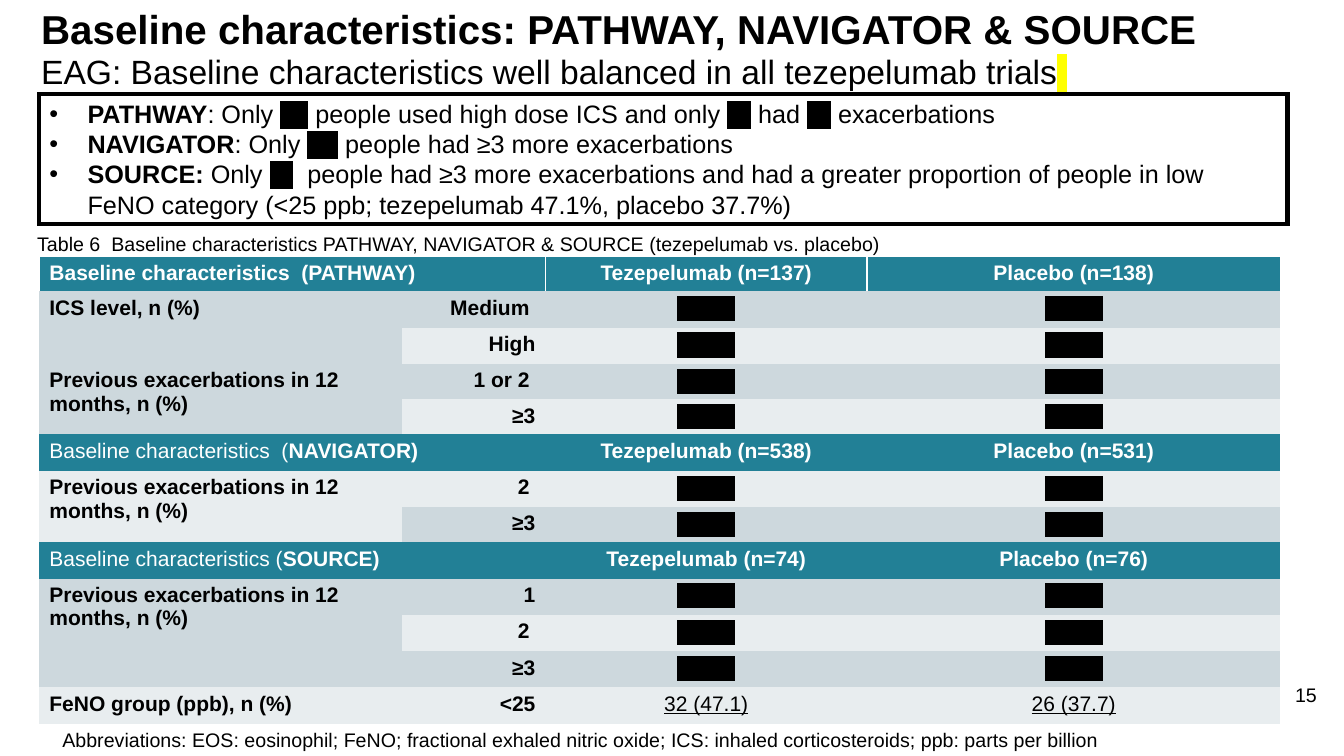
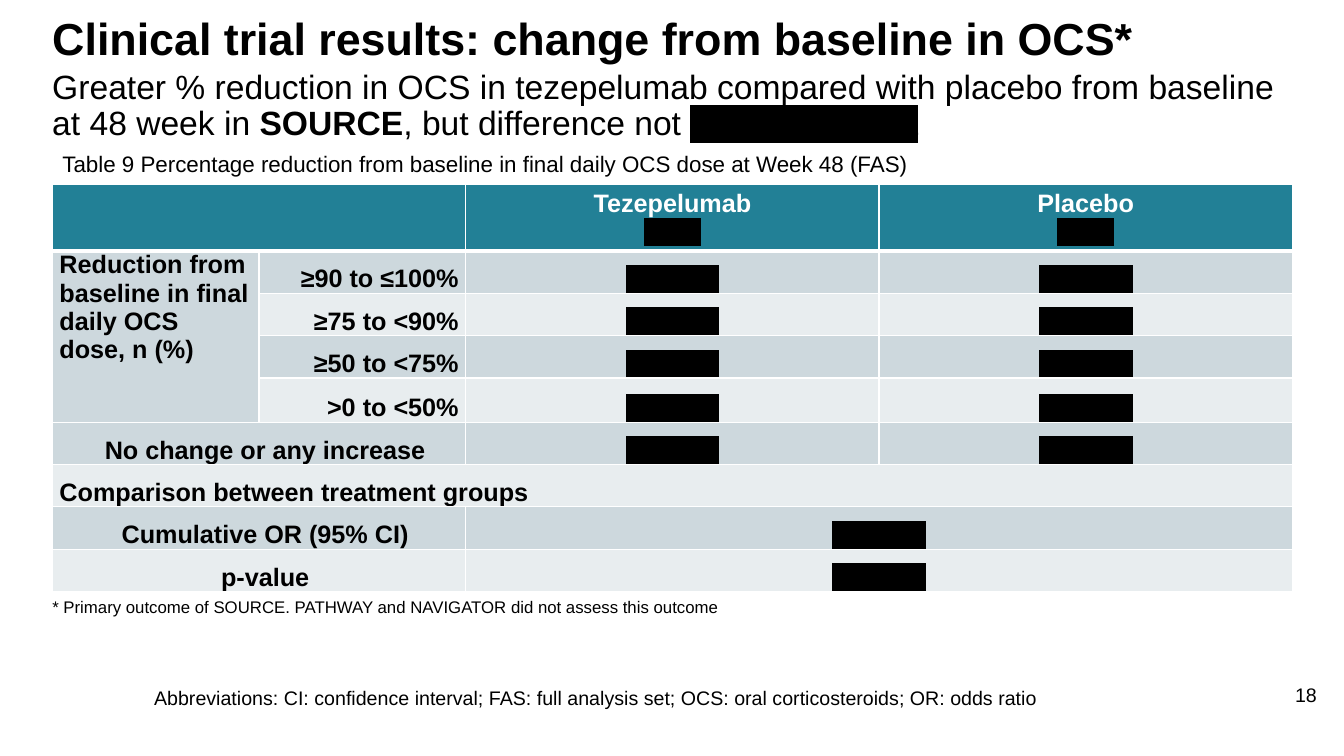
from dataclasses import dataclass, field

from lxml import etree
from pptx import Presentation
from pptx import util as u
from pptx.dml.color import RGBColor
from pptx.enum import shapes, text
from pptx.oxml import ns

BLACK = RGBColor(0x00, 0x00, 0x00)
WHITE = RGBColor(0xFF, 0xFF, 0xFF)
YELLOW = RGBColor(0xFF, 0xFF, 0x00)
TEAL = RGBColor(0x22, 0x80, 0x96)
LIGHT_BAND = RGBColor(0xE8, 0xED, 0xEF)
DARK_BAND = RGBColor(0xCD, 0xD8, 0xDD)
BANDS = (LIGHT_BAND, DARK_BAND)

FONT = "Arial"
NO_GRID_STYLE = "{2D5ABB26-0587-4C30-8999-92F81FD0307C}"
LEFT, CENTER, RIGHT = text.PP_ALIGN.LEFT, text.PP_ALIGN.CENTER, text.PP_ALIGN.RIGHT
TOP, BOTTOM = text.MSO_ANCHOR.TOP, text.MSO_ANCHOR.BOTTOM

BOLD = {"bold": True}
REDACTED = {"highlight": BLACK, "color": BLACK, "bold": False}
REDACTED_UNDERLINED = {**REDACTED, "underline": True}


@dataclass
class Cell:
    """Content and layout of one table cell."""
    paragraphs: list = field(default_factory=list)
    align: int = LEFT
    span: tuple = (1, 1)
    format: dict = field(default_factory=dict)
    anchor: int = TOP
    indent: float = 0
    margins: tuple = (0.1, 0.05, 0.1, 0.01)


def add_element(parent, tag, **attributes):
    """Append a drawing element to a parent."""
    return etree.SubElement(parent, ns.qn(tag), attributes)


def add_run(paragraph, words, style):
    """Add a run with the given format values."""
    run = paragraph.add_run()
    run.text = words
    values = {"name": FONT, "size": 18, "color": BLACK, **style}
    color, highlight = values.pop("color"), values.pop("highlight", None)
    values["size"] = u.Pt(values["size"])
    for name, value in values.items():
        setattr(run.font, name, value)
    run.font.color.rgb = color
    if highlight is not None:
        mark = etree.Element(ns.qn("a:highlight"))
        add_element(mark, "a:srgbClr", val=str(highlight))
        run.font.fill._xPr.find(ns.qn("a:solidFill")).addnext(mark)


def write(frame, paragraphs, style, align=LEFT, line_spacing=None, indent=0, bullet=None):
    """Fill a text frame with paragraphs given as lists of words and styles."""
    for index, runs in enumerate(paragraphs):
        paragraph = frame.add_paragraph() if index else frame.paragraphs[0]
        paragraph.alignment = align
        paragraph.line_spacing = line_spacing
        properties = paragraph._p.get_or_add_pPr()
        if indent:
            properties.set("marL", str(u.Inches(indent)))
        if bullet:
            properties.set("indent", str(-u.Inches(indent)))
            add_element(properties, "a:buFont", typeface=FONT)
            add_element(properties, "a:buChar", char=bullet)
        for words, run_style in runs:
            add_run(paragraph, words, {**style, **run_style})


def add_text(slide, box, runs, size, bold=False, align=LEFT, line_spacing=None):
    """Place one paragraph of text in a box."""
    shape = slide.shapes.add_textbox(*map(u.Inches, box))
    shape.text_frame.word_wrap = True
    runs = [(runs, {})] if isinstance(runs, str) else runs
    write(shape.text_frame, [runs], {"size": size, "bold": bold}, align, line_spacing)


def add_slide(presentation, title, title_box, title_size, subtitle, subtitle_box, number):
    """Start a slide with its title, subtitle and number."""
    slide = presentation.slides.add_slide(presentation.slide_layouts[6])
    add_text(slide, (12.55, 6.73, 0.61, 0.4), number, 14, align=RIGHT)
    add_text(slide, title_box, title, title_size, bold=True, line_spacing=0.9)
    add_text(slide, subtitle_box, subtitle, 24, line_spacing=0.9)
    return slide


def add_findings(slide, box, paragraphs):
    """Draw the outlined box of bulleted findings."""
    shape = slide.shapes.add_shape(shapes.MSO_SHAPE.RECTANGLE, *map(u.Inches, box))
    shape.shadow.inherit = False
    shape.fill.background()
    shape.line.color.rgb = BLACK
    shape.line.width = u.Pt(3)
    add_element(shape.line._get_or_add_ln(), "a:miter", lim="800000")
    shape.text_frame.word_wrap = True
    shape.text_frame.vertical_anchor = text.MSO_ANCHOR.MIDDLE
    write(shape.text_frame, paragraphs, {"size": 18}, indent=0.38, bullet="•")


def set_borders(table_cell, borders):
    """Draw white cell borders of the given widths."""
    properties = table_cell._tc.get_or_add_tcPr()
    sides = [side for side in "LRTB" if side in borders]
    for position, side in enumerate(sides):
        line = etree.Element(ns.qn(f"a:ln{side}"), w=str(u.Pt(borders[side])))
        add_element(add_element(line, "a:solidFill"), "a:srgbClr", val=str(WHITE))
        properties.insert(position, line)


def add_grid(slide, box, columns, heights, rows, headers, header_borders, body_borders):
    """Build a banded table with merged cells and teal header rows."""
    frame = slide.shapes.add_table(len(rows), len(columns), *map(u.Inches, box))
    table = frame.table
    table._tbl.tblPr.find(ns.qn("a:tableStyleId")).text = NO_GRID_STYLE
    for column, width in zip(table.columns, columns):
        column.width = u.Inches(width)
    for index, (cells, height) in enumerate(zip(rows, heights)):
        table.rows[index].height = u.Inches(height)
        for position, content in enumerate(cells):
            table_cell = table.cell(index, position)
            table_cell.fill.solid()
            table_cell.fill.fore_color.rgb = TEAL if index in headers else BANDS[index % 2]
            margins = content.margins if content else (0, 0, 0, 0)
            for side, margin in zip(("left", "top", "right", "bottom"), margins):
                setattr(table_cell, f"margin_{side}", u.Inches(margin))
            if content is None:
                continue
            down, across = content.span
            if content.span != (1, 1):
                table_cell.merge(table.cell(index + down - 1, position + across - 1))
            table_cell.vertical_anchor = content.anchor
            write(table_cell.text_frame, content.paragraphs, content.format,
                  content.align, indent=content.indent)
            set_borders(table_cell, body_borders if index else header_borders)


def trial_header(opening, trial, treated, control, bold=False):
    """Return the header row of one trial."""
    style = {"size": 15, "color": WHITE}
    arms = [Cell([[(f"{arm} (n={count})", BOLD)]], CENTER, format=style)
            for arm, count in (("Tezepelumab", treated), ("Placebo", control))]
    name = Cell([[(opening, {"bold": bold}), (trial, BOLD)]], span=(1, 2), format=style)
    return [name, None, *arms]


def trial_group(label, levels, values=None):
    """Return the rows of one characteristic, with redacted values by default."""
    style = {"size": 15}
    rows = []
    for index, level in enumerate(levels):
        name = None if index else Cell([[(label, BOLD)]], span=(len(levels), 1), format=style)
        figures = [(value, {"size": 15, "underline": True}) for value in values or ()]
        figures = figures or [("       X", {**REDACTED, "size": 16})] * 2
        rows.append([name, Cell([[(level, BOLD)]], RIGHT, format=style),
                     *(Cell([[figure]], CENTER) for figure in figures)])
    return rows


def baseline_slide(presentation):
    """Build the slide on baseline characteristics."""
    slide = add_slide(
        presentation,
        "Baseline characteristics: PATHWAY, NAVIGATOR & SOURCE", (0.31, 0.05, 12.3, 0.65), 28.8,
        [("EAG: Baseline characteristics well balanced in all tezepelumab trials", {}),
         (" ", {"highlight": YELLOW})], (0.31, 0.5, 12.3, 0.57), "15")
    previous = "Previous exacerbations in 12 months, n (%)"
    rows = [
        trial_header("Baseline characteristics  (", "PATHWAY)", 137, 138, bold=True),
        *trial_group("ICS level, n (%)", ["Medium ", "High"]),
        *trial_group(previous, ["1 or 2 ", "≥3"]),
        trial_header("Baseline characteristics  (", "NAVIGATOR)", 538, 531),
        *trial_group(previous, ["2 ", "≥3"]),
        trial_header("Baseline characteristics (", "SOURCE)", 74, 76),
        *trial_group(previous, ["1", "2 ", "≥3"]),
        *trial_group("FeNO group (ppb), n (%)", ["<25"], ["32 (47.1)", "26 (37.7)"]),
    ]
    heights = [0.35 if index in (0, 3, 4, 7) else 0.36 for index in range(len(rows))]
    add_grid(slide, (0.39, 2.54, 12.31, 4.64), (3.6, 1.42, 3.19, 4.1), heights, rows,
             (0, 5, 8), {"L": 1, "R": 1, "T": 1}, {})
    add_text(slide, (0.52, 7.2, 12.8, 0.4),
             "Abbreviations: EOS: eosinophil; FeNO; fractional exhaled nitric oxide; "
             "ICS: inhaled corticosteroids; ppb: parts per billion", 14, line_spacing=0.9)
    add_text(slide, (0.27, 2.25, 8.73, 0.34),
             "Table 6  Baseline characteristics PATHWAY, NAVIGATOR & SOURCE "
             "(tezepelumab vs. placebo)", 14)
    add_findings(slide, (0.39, 0.93, 12.38, 1.29), [
        [("PATHWAY", BOLD), (": Only ", {}), ("    ", REDACTED),
         (" people used high dose ICS and only ", {}), (" X", REDACTED),
         (" had ", {}), (" X", REDACTED), (" exacerbations", {})],
        [("NAVIGATOR", BOLD), (": Only ", {}), ("  X", REDACTED),
         (" people had ≥3 more exacerbations", {})],
        [("SOURCE: ", BOLD), ("Only ", {}), (" X", REDACTED),
         ("  people had ≥3 more exacerbations and had a greater proportion of people in low "
          "FeNO category (<25 ppb; tezepelumab 47.1%, placebo 37.7%)", {})],
    ])


def outcome_cell(words, align=CENTER, span=(1, 1), style=BOLD, **layout):
    """Return a body cell of the outcome table."""
    layout = {"anchor": BOTTOM, "margins": (0.07, 0, 0.07, 0), **layout}
    return Cell([[(words, style)]], align, span, **layout)


def outcome_slide(presentation):
    """Build the slide on the change in OCS dose."""
    slide = add_slide(
        presentation,
        "Clinical trial results: change from baseline in OCS*", (0.42, 0.12, 12.3, 0.65), 32,
        [("Greater % reduction in OCS in tezepelumab compared with placebo from baseline "
          "at 48 week in ", {}), ("SOURCE", BOLD), (", but difference not ", {}),
         ("sxxxxxxxxxxxxt", REDACTED_UNDERLINED)], (0.42, 0.65, 12.5, 0.77), "18")
    redacted = outcome_cell("           X", style=REDACTED)
    pooled = outcome_cell("           X", span=(1, 2), style=REDACTED)
    arms = [Cell([[(arm, {"color": WHITE})], [("x=xx", {**REDACTED_UNDERLINED, "bold": True})]],
                 CENTER, format=BOLD) for arm in ("Tezepelumab", "Placebo")]
    reduction = outcome_cell("Reduction from baseline in final daily OCS dose, n (%)",
                             LEFT, (4, 1), anchor=TOP, margins=(0.07, 0, 0.1, 0))
    levels = ["≥90 to ≤100%", "≥75 to <90%", "≥50 to <75%", ">0 to <50%"]
    rows = [
        [Cell(span=(1, 2)), None, *arms],
        *([None if index else reduction, outcome_cell(level, RIGHT, indent=0.12),
           redacted, redacted] for index, level in enumerate(levels)),
        [outcome_cell("No change or any increase", span=(1, 2), indent=0.12), None,
         redacted, redacted],
        [outcome_cell("Comparison between treatment groups", LEFT, (1, 4)), None, None, None],
        *([outcome_cell(label, span=(1, 2), indent=0.12), None, pooled, None]
          for label in ("Cumulative OR (95% CI)", "p-value")),
    ]
    heights = [0.65, 0.42, 0.42, 0.42, 0.44, 0.42, 0.42, 0.42, 0.42]
    grid = dict.fromkeys("LRTB", 1)
    add_grid(slide, (0.52, 1.83, 12.3, 4.03), (2.05, 2.05, 4.1, 4.1), heights, rows,
             (0,), {**grid, "B": 3}, grid)
    add_text(slide, (1.43, 6.78, 11.07, 0.38),
             "Abbreviations: CI: confidence interval; FAS: full analysis set; "
             "OCS: oral corticosteroids; OR: odds ratio", 14, line_spacing=0.9)
    add_text(slide, (0.42, 5.87, 7.85, 0.3),
             "* Primary outcome of SOURCE. PATHWAY and NAVIGATOR did not assess this outcome", 12)
    add_text(slide, (0.52, 1.44, 11.11, 0.37),
             "Table 9 Percentage reduction from baseline in final daily OCS dose "
             "at Week 48 (FAS)", 16)


def main():
    """Build and save the presentation."""
    presentation = Presentation()
    presentation.slide_width = u.Inches(13.33)
    presentation.slide_height = u.Inches(7.5)
    baseline_slide(presentation)
    outcome_slide(presentation)
    presentation.save("out.pptx")


if __name__ == "__main__":
    main()
